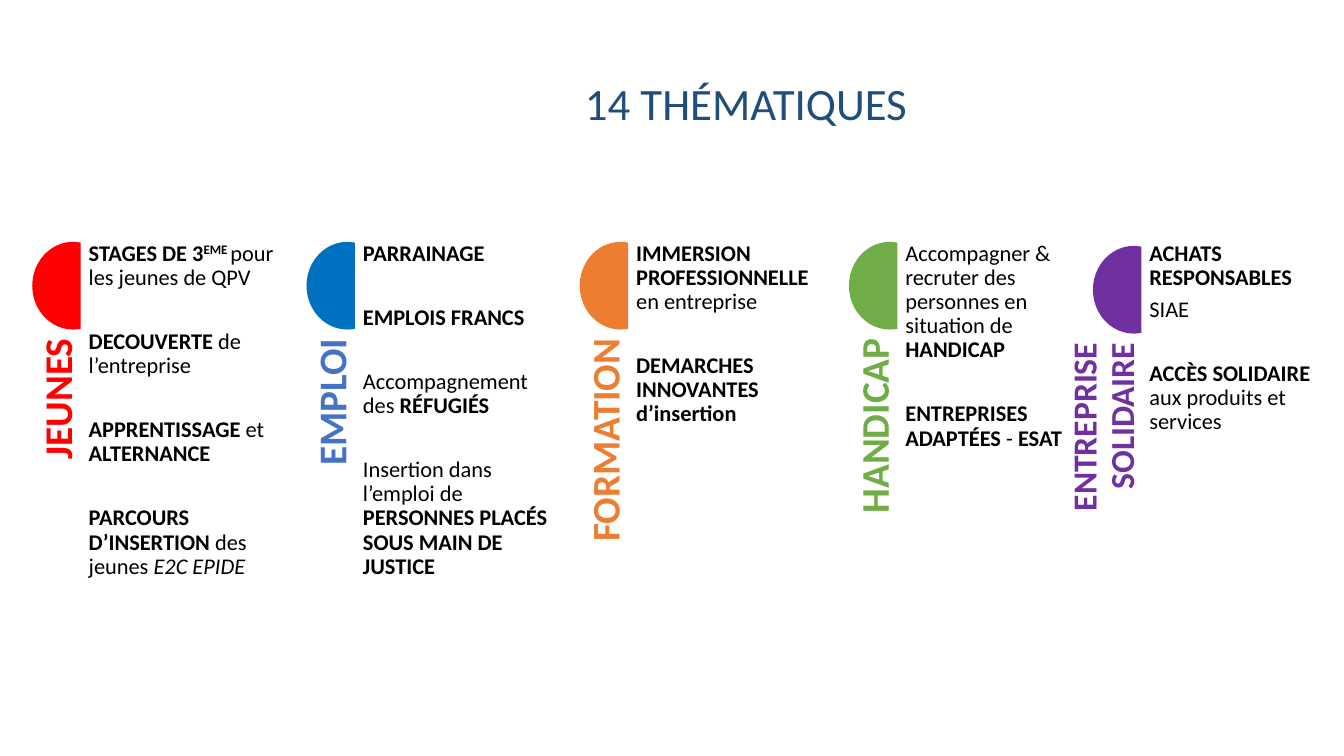
from dataclasses import dataclass

from pptx import Presentation
from pptx.dml.color import RGBColor
from pptx.enum.shapes import MSO_SHAPE
from pptx.enum.text import MSO_ANCHOR, PP_ALIGN
from pptx.util import Inches, Pt

CHORD = MSO_SHAPE.CHORD
TOP, MIDDLE, BOTTOM = MSO_ANCHOR.TOP, MSO_ANCHOR.MIDDLE, MSO_ANCHOR.BOTTOM
LEFT, CENTER, RIGHT = PP_ALIGN.LEFT, PP_ALIGN.CENTER, PP_ALIGN.RIGHT

FONT = "Calibri"
COLORS = {
    "navy": "1E4E79", "black": "000000", "red": "FF0000", "blue": "0070C0",
    "azure": "4472C4", "orange": "ED7D31", "green": "70AD47", "purple": "7030A0",
}
NEAR, FAR = 5.6, 28.5
THICK = 0.48


@dataclass(frozen=True)
class Run:
    text: str
    bold: bool = False
    italic: bool = False
    raised: bool = False
    size: float = 16


@dataclass(frozen=True)
class Para:
    runs: tuple[Run, ...]
    gap: float = FAR


@dataclass(frozen=True)
class Theme:
    left: float
    fill: str
    ink: str
    label: tuple[Run, ...]
    paras: tuple[Para, ...]
    width: float
    top: float = 2.4
    length: float = 2.53


def plain(text: str) -> Run:
    return Run(text)


def strong(text: str, size: float = 16) -> Run:
    return Run(text, bold=True, size=size)


def para(*runs: Run, gap: float = FAR) -> Para:
    return Para(runs, gap)


THEMES = (
    Theme(0.32, "red", "red", (strong("JEUNES", 28),), (
        para(strong("STAGES DE 3"), Run("EME ", bold=True, raised=True),
             plain("pour les jeunes de QPV")),
        para(strong("DECOUVERTE"), plain(" de l’entreprise")),
        para(strong("APPRENTISSAGE "), plain("et "), strong("ALTERNANCE")),
        para(strong("PARCOURS D’INSERTION "), plain("des jeunes "),
             Run("E2C EPIDE", italic=True)),
    ), 1.91),
    Theme(3.04, "blue", "azure", (strong("EMPLOI", 28),), (
        para(strong("PARRAINAGE")),
        para(strong("EMPLOIS FRANCS")),
        para(plain("Accompagnement des "), strong("RÉFUGIÉS")),
        para(plain("Insertion dans l’emploi de "),
             strong("PERSONNES PLACÉS SOUS MAIN DE JUSTICE")),
    ), 1.91),
    Theme(5.75, "orange", "orange", (strong("FORMATION", 28),), (
        para(strong("IMMERSION PROFESSIONNELLE "), plain("en entreprise")),
        para(strong("DEMARCHES INNOVANTES d’insertion")),
    ), 1.87, length=2.73),
    Theme(8.42, "green", "green", (strong("HANDICAP", 28),), (
        para(plain("Accompagner & recruter des personnes en situation de "),
             strong("HANDICAP")),
        para(strong("ENTREPRISES ADAPTÉES "), plain("- "), strong("ESAT")),
    ), 1.61),
    Theme(10.84, "purple", "purple",
          (strong("ENTREPRISE", 24), strong(" ", 28), strong("SOLIDAIRE", 24)), (
        para(strong("ACHATS RESPONSABLES")),
        para(plain("SIAE"), gap=NEAR),
        para(strong("ACCÈS SOLIDAIRE"), plain(" aux produits et services")),
    ), 1.61, top=2.44),
)


def color(name: str) -> RGBColor:
    return RGBColor.from_string(COLORS[name])


def write(shape, paras: tuple[Para, ...], ink: str, align, anchor) -> None:
    frame = shape.text_frame
    frame.word_wrap = True
    frame.vertical_anchor = anchor
    for index, item in enumerate(paras):
        line = frame.add_paragraph() if index else frame.paragraphs[0]
        line.alignment = align
        line.line_spacing = 0.9
        line.space_before = Pt(item.gap if index else 0)
        for part in item.runs:
            run = line.add_run()
            run.text = part.text
            font = run.font
            font.name, font.size = FONT, Pt(part.size)
            font.bold, font.italic = part.bold, part.italic
            font.color.rgb = color(ink)
            if part.raised:
                run._r.get_or_add_rPr().set("baseline", "30000")


def add_box(slide, left: float, top: float, width: float, height: float):
    box = slide.shapes.add_textbox(
        Inches(left), Inches(top), Inches(width), Inches(height))
    frame = box.text_frame
    frame.margin_left = frame.margin_right = 0
    frame.margin_top = frame.margin_bottom = 0
    return box


def add_theme(slide, theme: Theme) -> None:
    chord = slide.shapes.add_shape(
        CHORD, Inches(theme.left), Inches(theme.top), Inches(0.81), Inches(0.87))
    chord.adjustments[0] = 48
    chord.adjustments[1] = 168
    chord.shadow.inherit = False
    chord.fill.solid()
    chord.fill.fore_color.rgb = color(theme.fill)
    chord.line.fill.background()

    half = theme.length / 2
    label = add_box(slide, theme.left + 0.24 - half,
                    theme.top + 0.96 + half - THICK / 2, theme.length, THICK)
    label.rotation = 270
    write(label, (Para(theme.label),), theme.ink, RIGHT, BOTTOM)

    body = add_box(slide, theme.left + 0.56, 2.4, theme.width, 3.5)
    write(body, theme.paras, "black", LEFT, TOP)


def main() -> None:
    deck = Presentation()
    deck.slide_width, deck.slide_height = Inches(13.33), Inches(7.5)
    slide = deck.slides.add_slide(deck.slide_layouts[5])
    title = slide.shapes.title
    title.left, title.top = Inches(2.4), Inches(0.2)
    title.width, title.height = Inches(10), Inches(1.7)
    write(title, (para(Run("14 THÉMATIQUES", size=32)),), "navy", CENTER, MIDDLE)
    for theme in THEMES:
        add_theme(slide, theme)
    deck.save("out.pptx")


if __name__ == "__main__":
    main()
